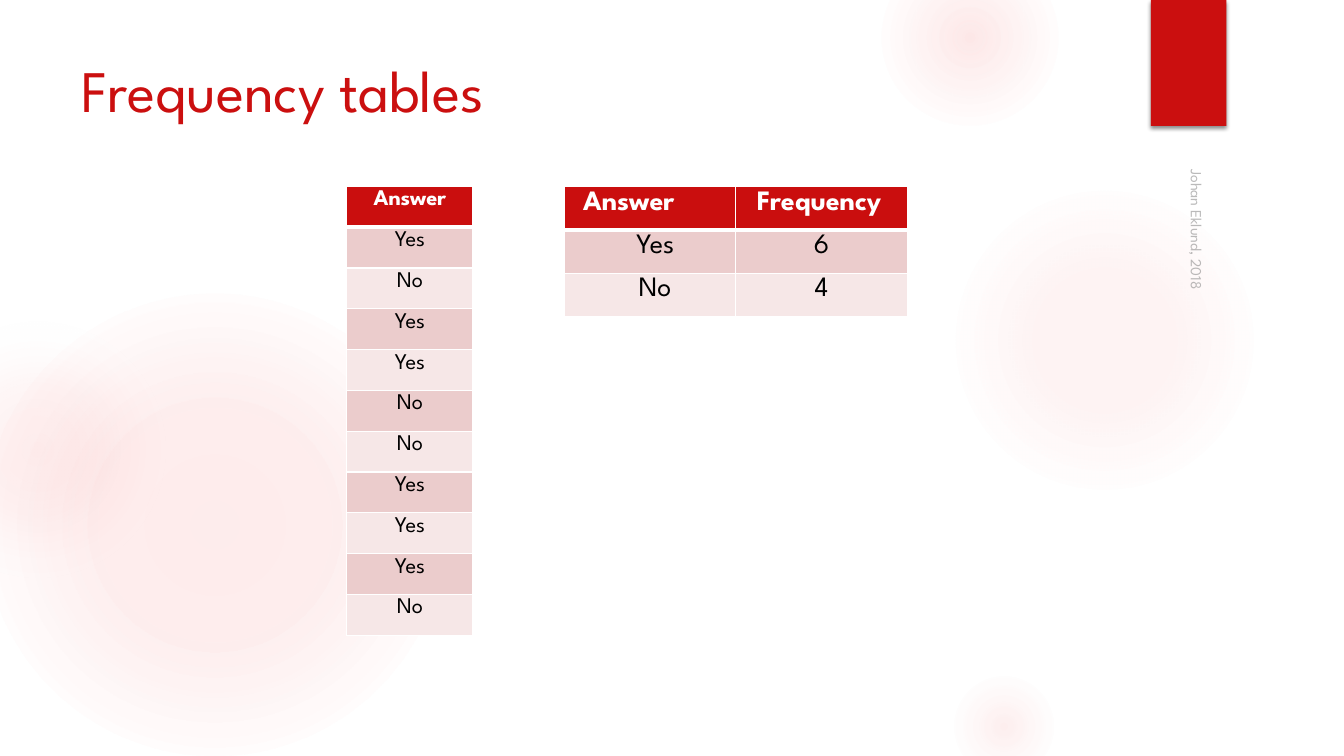
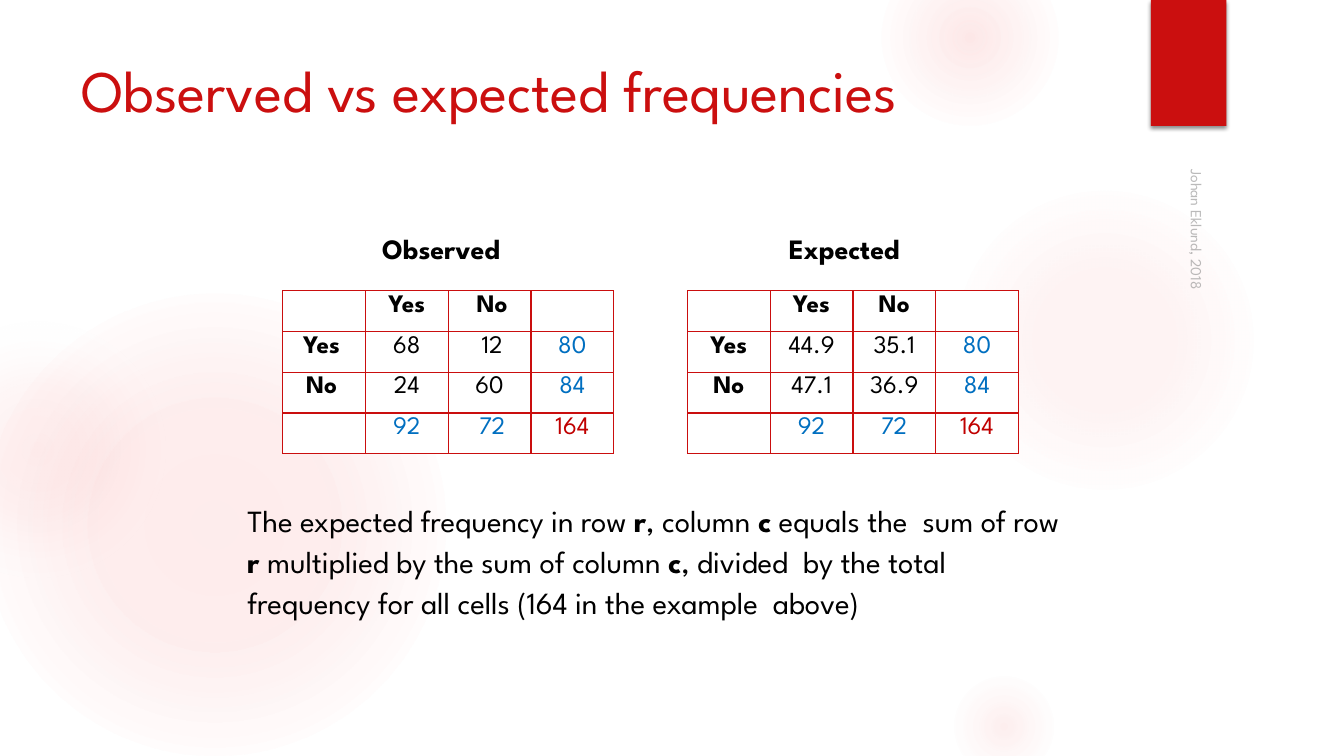
from dataclasses import dataclass

from lxml.etree import SubElement
from pptx import Presentation
from pptx.dml.color import RGBColor
from pptx.enum.shapes import MSO_SHAPE as Shape
from pptx.enum.text import MSO_ANCHOR as Anchor, MSO_AUTO_SIZE as AutoSize, PP_ALIGN as Align
from pptx.oxml import parse_xml
from pptx.oxml.ns import nsdecls, qn
from pptx.util import Inches, Pt


@dataclass(frozen=True)
class Theme:
    """Colours, type sizes and line widths shared by the deck."""
    font: str = "League Spartan"
    accent: str = "CB0F0F"
    table_red: str = "CA0E0E"
    glow: str = "F35C5C"
    mist: str = "F3F3F3"
    band_dark: str = "EBCCCC"
    band_light: str = "F6E7E7"
    white: str = "FFFFFF"
    ink: str = "000000"
    sum_blue: str = "006FC0"
    total_red: str = "C00000"
    grey: str = "8C8C8C"
    title: int = 42
    body: int = 22
    heading: int = 20
    cell: int = 18
    small_cell: int = 16
    footer: int = 11
    outer_line: float = 0.75
    inner_line: float = 1
    header_line: float = 3


THEME = Theme()
COLUMNS, ROWS = 160, 90
CROSS_CELL = (9.85, 4.86)
GLOWS = [
    (-2, 35, 55, [(0, 11), (36, 10), (75, 0)], THEME.glow),
    (-11, 38, 31, [(0, 8), (36, 5), (71, 0)], THEME.mist),
    (113, 22, 37, [(0, 7), (36, 6), (69, 0)], THEME.glow),
    (105, -6, 21, [(0, 14), (36, 7), (73, 0)], THEME.glow),
    (113, 80, 13, [(0, 10), (31, 5), (66, 0)], THEME.glow),
]
ANSWERS = ["Yes", "No", "Yes", "Yes", "No", "No", "Yes", "Yes", "Yes", "No"]
OBSERVED = [["", "Yes", "No", ""], ["Yes", "68", "12", "80"],
            ["No", "24", "60", "84"], ["", "92", "72", "164"]]
EXPECTED = [["", "Yes", "No", ""], ["Yes", "44.9", "35.1", "80"],
            ["No", "47.1", "36.9", "84"], ["", "92", "72", "164"]]
EXPLANATION = ("The expected frequency in row *r*, column *c* equals the  sum of row "
               "*r* multiplied by the sum of column *c*, divided  by the total "
               "frequency for all cells (164 in the example  above)")


def grid(*cells):
    """Convert grid cells to lengths; a cell is a twelfth of an inch."""
    return [Inches(cell / 12) for cell in cells]


def style(span, size, colour, bold=False):
    """Format one run."""
    span.font.name, span.font.size, span.font.bold = THEME.font, Pt(size), bold
    span.font.color.rgb = RGBColor.from_string(colour)
    span.font._element.set("spc", "-5")


def prepare_frame(frame, anchor):
    """Give a text frame its margins, wrapping and anchor."""
    frame.margin_left = frame.margin_top = frame.margin_right = frame.margin_bottom = 0
    frame.word_wrap, frame.auto_size = True, AutoSize.NONE
    frame.vertical_anchor = anchor


def add_text(page, text, area, size, colour=THEME.ink, bold=False, anchor=Anchor.BOTTOM):
    """Add a text box in which asterisks switch bold on and off."""
    box = page.shapes.add_textbox(*grid(*area))
    prepare_frame(box.text_frame, anchor)
    para = box.text_frame.paragraphs[0]
    for index, part in enumerate(text.split("*")):
        span = para.add_run()
        span.text = part
        style(span, size, colour, bold or index % 2 == 1)
    return box


def add_plain_shape(page, kind, area, colour=None):
    """Add a preset shape without line or shadow."""
    shape = page.shapes.add_shape(kind, *grid(*area))
    set_fill(shape, colour)
    shape.line.fill.background()
    shape.shadow.inherit = False
    return shape


def set_fill(target, colour):
    """Fill a shape or cell, or leave it clear."""
    if colour:
        target.fill.solid()
        target.fill.fore_color.rgb = RGBColor.from_string(colour)
    else:
        target.fill.background()


def add_glow(page, left, top, size, stops, edge):
    """Add a circle that fades outwards through (position, opacity) stops."""
    glow = add_plain_shape(page, Shape.OVAL, (left, top, size, size))
    colours = (THEME.glow, THEME.glow, edge)
    marks = "".join(
        f'<a:gs pos="{position * 1000}"><a:srgbClr val="{colour}">'
        f'<a:alpha val="{opacity * 1000}"/></a:srgbClr></a:gs>'
        for (position, opacity), colour in zip(stops, colours))
    gradient = parse_xml(
        f'<a:gradFill {nsdecls("a")} rotWithShape="1"><a:gsLst>{marks}</a:gsLst>'
        '<a:path path="circle"><a:fillToRect l="50000" t="50000" r="50000" b="50000"/>'
        '</a:path></a:gradFill>')
    properties = glow._element.spPr
    properties.replace(properties.find(qn("a:noFill")), gradient)
    return glow


def add_ribbon(page):
    """Add the red ribbon with its soft shadow."""
    ribbon = add_plain_shape(page, Shape.RECTANGLE, (137, 0, 9, 15), THEME.accent)
    ribbon._element.spPr.find(qn("a:effectLst")).append(parse_xml(
        f'<a:outerShdw {nsdecls("a")} blurRad="{Pt(3)}" dist="{Pt(2)}" dir="5400000" '
        f'rotWithShape="0"><a:srgbClr val="{THEME.ink}"><a:alpha val="45000"/></a:srgbClr>'
        '</a:outerShdw>'))
    return ribbon


def decorate_layout(layout, page):
    """Draw the shared background and move it from the page to the layout."""
    art = [add_glow(page, *glow) for glow in GLOWS] + [add_ribbon(page)]
    for shape in art:
        layout.shapes._spTree.append(shape._element)


def set_title(page, text):
    """Place and format the title placeholder."""
    title = page.shapes.title
    title.left, title.top, title.width, title.height = grid(9.7, 6.05, 119, 8.75)
    title.text_frame.text = text
    prepare_frame(title.text_frame, Anchor.BOTTOM)
    para = title.text_frame.paragraphs[0]
    para.alignment, para.line_spacing = Align.LEFT, 1.0
    style(para.runs[0], THEME.title, THEME.accent)


def add_footer(page):
    """Add the upright, half-transparent author line."""
    box = add_text(page, "Johan Eklund, 2018", (117.5, 42.4, 50.6, 4),
                   THEME.footer, THEME.grey)
    box.rotation = 90
    box.text_frame.margin_left = Inches(0.09)
    box.text_frame.margin_bottom = Inches(0.05)
    colour = box._element.find(".//" + qn("a:srgbClr"))
    SubElement(colour, qn("a:alpha"), val="60000")


def set_borders(cell, colour, widths):
    """Draw the left, right, top and bottom borders of a cell."""
    properties = cell._tc.get_or_add_tcPr()
    for side, width in zip("LRTB", widths):
        properties.append(parse_xml(
            f'<a:ln{side} {nsdecls("a")} w="{Pt(width)}"><a:solidFill>'
            f'<a:srgbClr val="{colour}"/></a:solidFill></a:ln{side}>'))


def edge_widths(index, count, first_inner):
    """Return the widths of the lines before and after a row or column."""
    lines = [THEME.outer_line, first_inner] + [THEME.inner_line] * (count - 2)
    lines = lines[:count] + [THEME.outer_line]
    return lines[index], lines[index + 1]


def add_grid_table(page, rows, corner, cell_size, size, border, look, header_line):
    """Add a table whose look(row, column) gives fill, text colour and bold."""
    height, width = len(rows), len(rows[0])
    area = grid(*corner, cell_size[0] * width, cell_size[1] * height)
    table = page.shapes.add_table(height, width, *area).table
    table.first_row = table.horz_banding = False
    for row, values in enumerate(rows):
        for column, value in enumerate(values):
            cell = table.cell(row, column)
            fill, colour, bold = look(row, column)
            set_borders(cell, border, edge_widths(column, width, THEME.inner_line)
                        + edge_widths(row, height, header_line))
            set_fill(cell, fill)
            cell.margin_left = cell.margin_right = cell.margin_bottom = 0
            cell.margin_top = Inches(0.02)
            cell.text_frame.text = value
            para = cell.text_frame.paragraphs[0]
            para.alignment, para.line_spacing = Align.CENTER, Pt(size)
            for span in para.runs:
                style(span, size, colour, bold)
    return table


def add_banded_table(page, rows, corner, cell_size, size):
    """Add a table with a red header and pink bands."""
    def look(row, column):
        """Choose header or band colours."""
        if row == 0:
            return THEME.table_red, THEME.white, True
        return (THEME.band_dark if row % 2 else THEME.band_light), THEME.ink, False
    return add_grid_table(page, rows, corner, cell_size, size, THEME.white, look,
                          THEME.header_line)


def add_cross_table(page, rows, corner, white_columns):
    """Add a contingency table with white backing and coloured sums."""
    last = len(rows) - 1
    (left, top), (width, height) = corner, CROSS_CELL

    def look(row, column):
        """Choose colours for labels, counts, sums and the total."""
        ends = (row == last) + (column == last)
        colour = (THEME.ink, THEME.sum_blue, THEME.total_red)[ends]
        fill = THEME.white if column in white_columns else None
        return fill, colour, row == 0 or column == 0

    for row in range(len(rows)):
        for column in white_columns:
            add_plain_shape(page, Shape.RECTANGLE, (left + column * width,
                            top + row * height, width, height), THEME.white)
    return add_grid_table(page, rows, corner, CROSS_CELL, THEME.cell,
                          THEME.table_red, look, THEME.inner_line)


def fill_frequency_page(page):
    """Show the raw answers beside their frequencies."""
    set_title(page, "Frequency tables")
    add_banded_table(page, [["Answer"]] + [[answer] for answer in ANSWERS],
                     (41.3, 22.2), (15, 4.86), THEME.small_cell)
    counts = [["Answer", "Frequency"]]
    counts += [[answer, str(ANSWERS.count(answer))] for answer in ("Yes", "No")]
    table = add_banded_table(page, counts, (67.2, 22.2), (20.4, 5.16), THEME.heading)
    for row, indent in enumerate((0.61, 0.61, 0.64)):
        cell = table.cell(row, 0)
        cell.margin_right = Inches(indent)
        cell.text_frame.paragraphs[0].alignment = Align.RIGHT
    table.cell(0, 1).margin_right = Inches(0.05)
    add_footer(page)


def fill_comparison_page(page):
    """Show observed and expected counts with the rule between them."""
    set_title(page, "Observed vs expected frequencies")
    observed = add_cross_table(page, OBSERVED, (33.67, 34.6), (0, 1))
    for row in (1, 2):
        observed.cell(row, 0).margin_right = Inches(0.05)
    for row in (0, 1, 3):
        observed.cell(row, 2).margin_left = Inches(0.05)
    add_cross_table(page, EXPECTED, (81.85, 34.6), (3,))
    for heading, left in (("Observed", 45.5), ("Expected", 93.9)):
        add_text(page, heading, (left, 27.25, 16, 4.3), THEME.heading, bold=True)
    box = add_text(page, EXPLANATION, (29.45, 59.3, 98.2, 19.7), THEME.body,
                   anchor=Anchor.TOP)
    box.text_frame.paragraphs[0].line_spacing = Pt(29.2)
    add_footer(page)


def main():
    """Build and save the deck."""
    deck = Presentation()
    deck.slide_width, deck.slide_height = grid(COLUMNS, ROWS)
    layout = deck.slide_layouts[5]
    pages = [deck.slides.add_slide(layout) for _ in range(2)]
    decorate_layout(layout, pages[0])
    fill_frequency_page(pages[0])
    fill_comparison_page(pages[1])
    deck.save("out.pptx")


if __name__ == "__main__":
    main()
